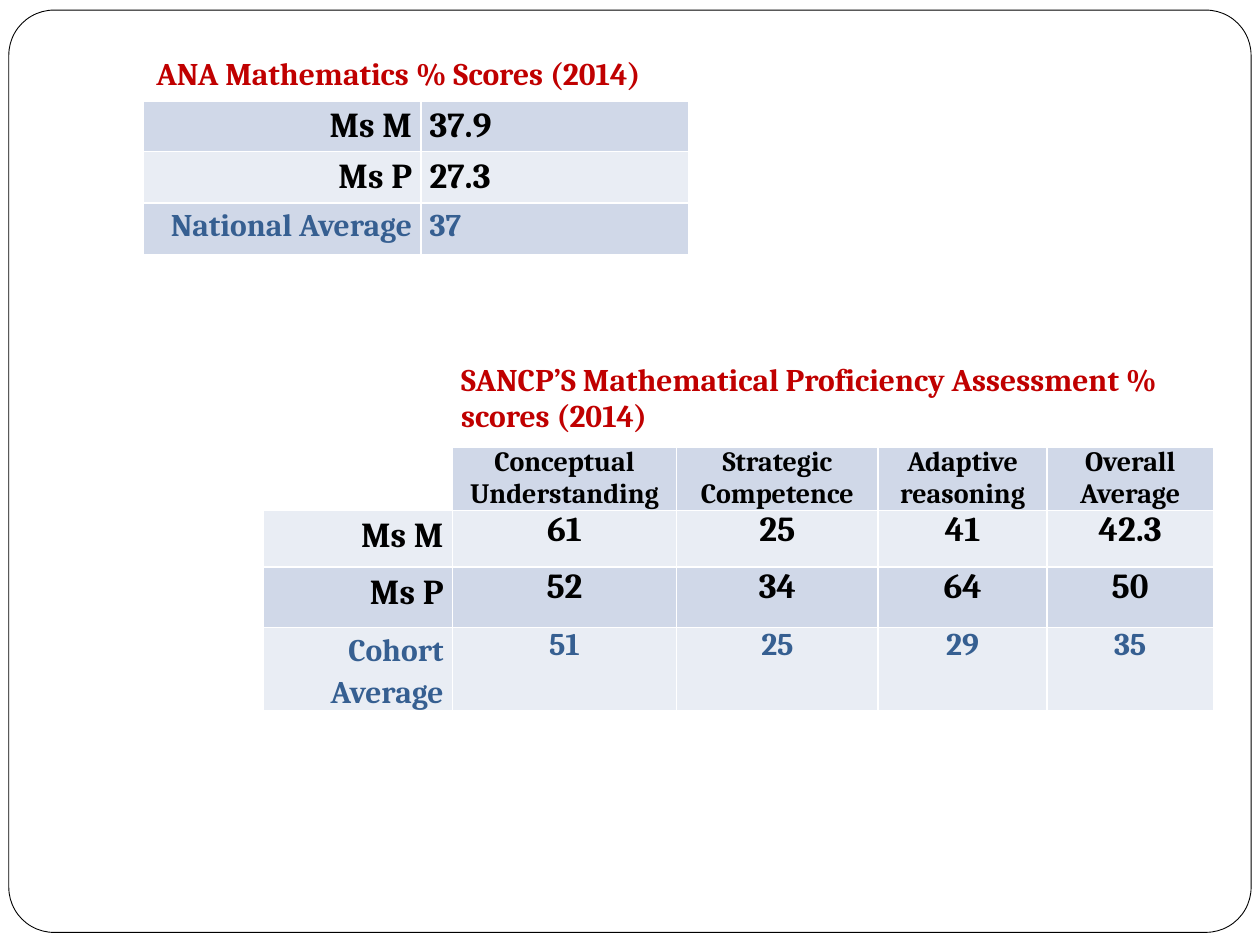
from lxml.etree import SubElement
from pptx import Presentation
from pptx.dml.color import RGBColor
from pptx.enum.shapes import MSO_SHAPE as Shape
from pptx.enum.text import PP_ALIGN as Align
from pptx.oxml.ns import qn
from pptx.util import Inches, Pt

BLACK = RGBColor(0x00, 0x00, 0x00)
WHITE = RGBColor(0xFF, 0xFF, 0xFF)
RED = RGBColor(0xC0, 0x00, 0x00)
BLUE = RGBColor(0x36, 0x5F, 0x91)
BAND_DARK = RGBColor(0xD0, 0xD8, 0xE8)
BAND_LIGHT = RGBColor(0xE9, 0xED, 0xF4)
BANDS = (BAND_DARK, BAND_LIGHT)
FONT = "Cambria"

ANA_TITLE = "ANA Mathematics % Scores (2014)"
ANA_ROWS = [("Ms M", "37.9"), ("Ms P", "27.3"), ("National Average", "37")]
SANCP_TITLE = "SANCP’S Mathematical Proficiency Assessment % scores (2014)"
SANCP_HEADS = ["Conceptual Understanding", "Strategic Competence",
               "Adaptive reasoning", "Overall Average"]
SANCP_ROWS = [
    ("Ms M", "61", "25", "41", "42.3"),
    ("Ms P", "52", "34", "64", "50"),
    ("Cohort Average", "51", "25", "29", "35"),
]


def write(cell, text, size=20, color=BLACK, align=Align.LEFT, spacing=1.0):
    p = cell.text_frame.paragraphs[0]
    p.alignment = align
    p.line_spacing = spacing
    r = p.add_run()
    r.text = text
    r.font.name = FONT
    r.font.size = Pt(size)
    r.font.bold = True
    r.font.color.rgb = color


def set_borders(cell, bottom=1):
    props = cell._tc.get_or_add_tcPr()
    for side, width in (("L", 1), ("R", 1), ("T", 1), ("B", bottom)):
        line = SubElement(props, qn(f"a:ln{side}"), w=str(Pt(width)))
        fill = SubElement(line, qn("a:solidFill"))
        SubElement(fill, qn("a:srgbClr"), val=str(WHITE))


def set_margins(cell):
    cell.margin_left = cell.margin_right = Inches(0.07)
    cell.margin_top = cell.margin_bottom = 0


def fill_cell(cell, color):
    cell.fill.solid()
    cell.fill.fore_color.rgb = color


def add_grid(s, left, top, widths, heights):
    frame = s.shapes.add_table(len(heights), len(widths), Inches(left), Inches(top),
                               Inches(sum(widths)), Inches(sum(heights)))
    table = frame.table
    table.first_row = table.horz_banding = False
    for column, width in zip(table.columns, widths):
        column.width = Inches(width)
    for i, (row, height) in enumerate(zip(table.rows, heights)):
        row.height = Inches(height)
        for cell in row.cells:
            set_borders(cell, bottom=1 if i else 3)
            cell.fill.background()
    return table


def add_score_rows(table, rows, first_row, first_band, align, spacing):
    for i, values in enumerate(rows):
        is_average = i == len(rows) - 1
        size, color = (18, BLUE) if is_average else (20, BLACK)
        for j, value in enumerate(values):
            cell = table.cell(first_row + i, j)
            set_margins(cell)
            fill_cell(cell, BANDS[(first_band + i) % 2])
            write(cell, value, size=size, color=color,
                  align=align if j else Align.RIGHT,
                  spacing=spacing if j else 1.15)


def add_frame(s):
    sp = s.shapes.add_shape(Shape.ROUNDED_RECTANGLE, Inches(0.07), Inches(0.08),
                            Inches(9.86), Inches(7.32))
    sp.adjustments[0] = 0.049
    sp.shadow.inherit = False
    sp.fill.solid()
    sp.fill.fore_color.rgb = WHITE
    sp.line.color.rgb = BLACK
    sp.line.width = Pt(0.5)


def add_ana_table(s):
    table = add_grid(s, 1.14, 0.36, [2.2, 2.13], [0.41] * 4)
    title = table.cell(0, 0)
    title.merge(table.cell(0, 1))
    write(title, ANA_TITLE, size=18, color=RED, spacing=1.15)
    add_score_rows(table, ANA_ROWS, 1, 0, Align.LEFT, 1.15)


def add_sancp_table(s):
    table = add_grid(s, 2.09, 2.88, [1.5, 1.78, 1.6, 1.34, 1.32],
                     [0.66, 0.45, 0.45, 0.48, 0.45])
    title = table.cell(0, 1)
    title.merge(table.cell(0, 4))
    set_margins(title)
    write(title, SANCP_TITLE, size=18, color=RED)
    for j, head in enumerate(SANCP_HEADS, start=1):
        cell = table.cell(1, j)
        set_margins(cell)
        fill_cell(cell, BAND_DARK)
        write(cell, head, size=16, align=Align.CENTER)
    add_score_rows(table, SANCP_ROWS, 2, 1, Align.CENTER, 1.0)


def main():
    prs = Presentation()
    prs.slide_width, prs.slide_height = Inches(10), Inches(7.5)
    s = prs.slides.add_slide(prs.slide_layouts[6])
    add_frame(s)
    add_ana_table(s)
    add_sancp_table(s)
    prs.save("out.pptx")


if __name__ == "__main__":
    main()
